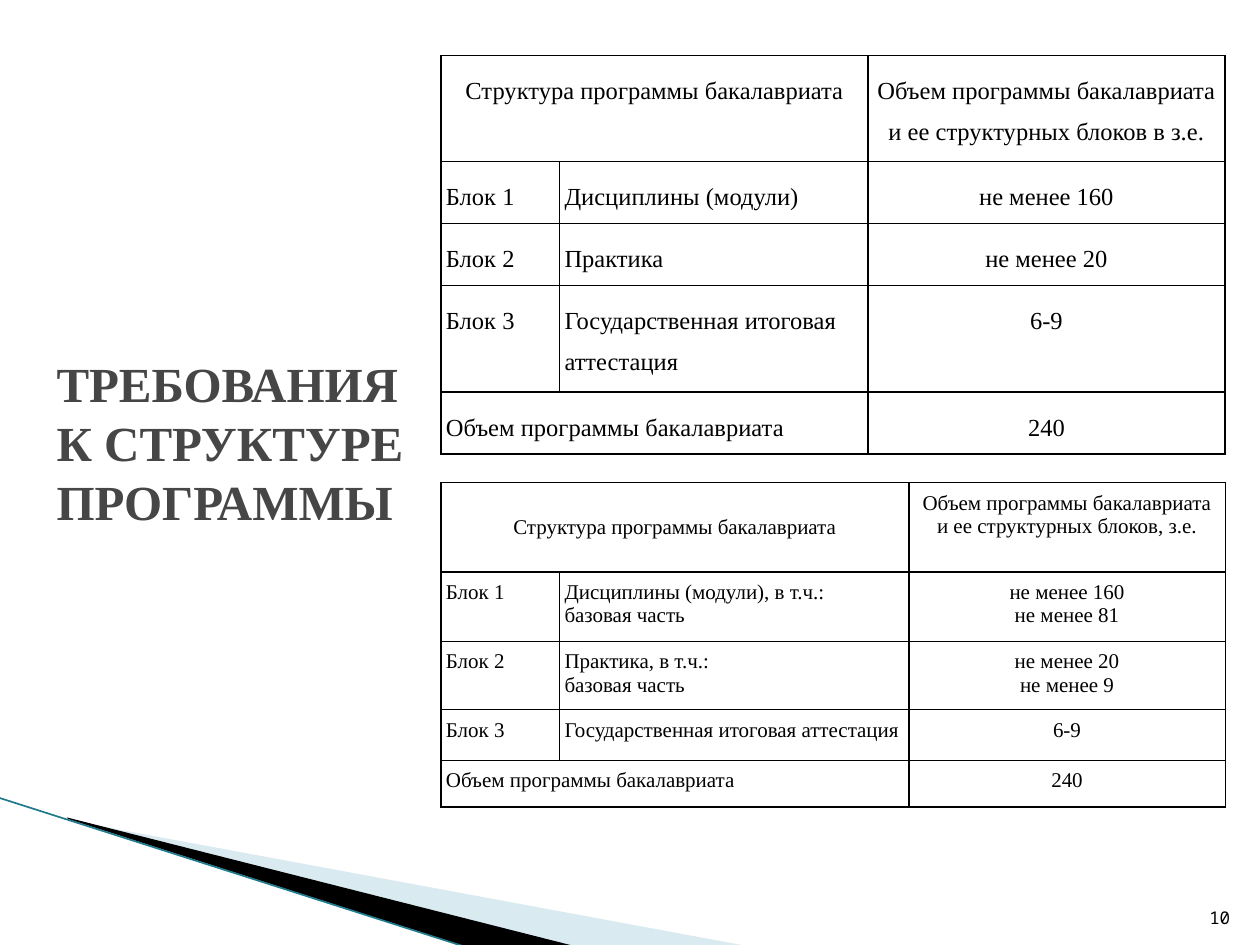
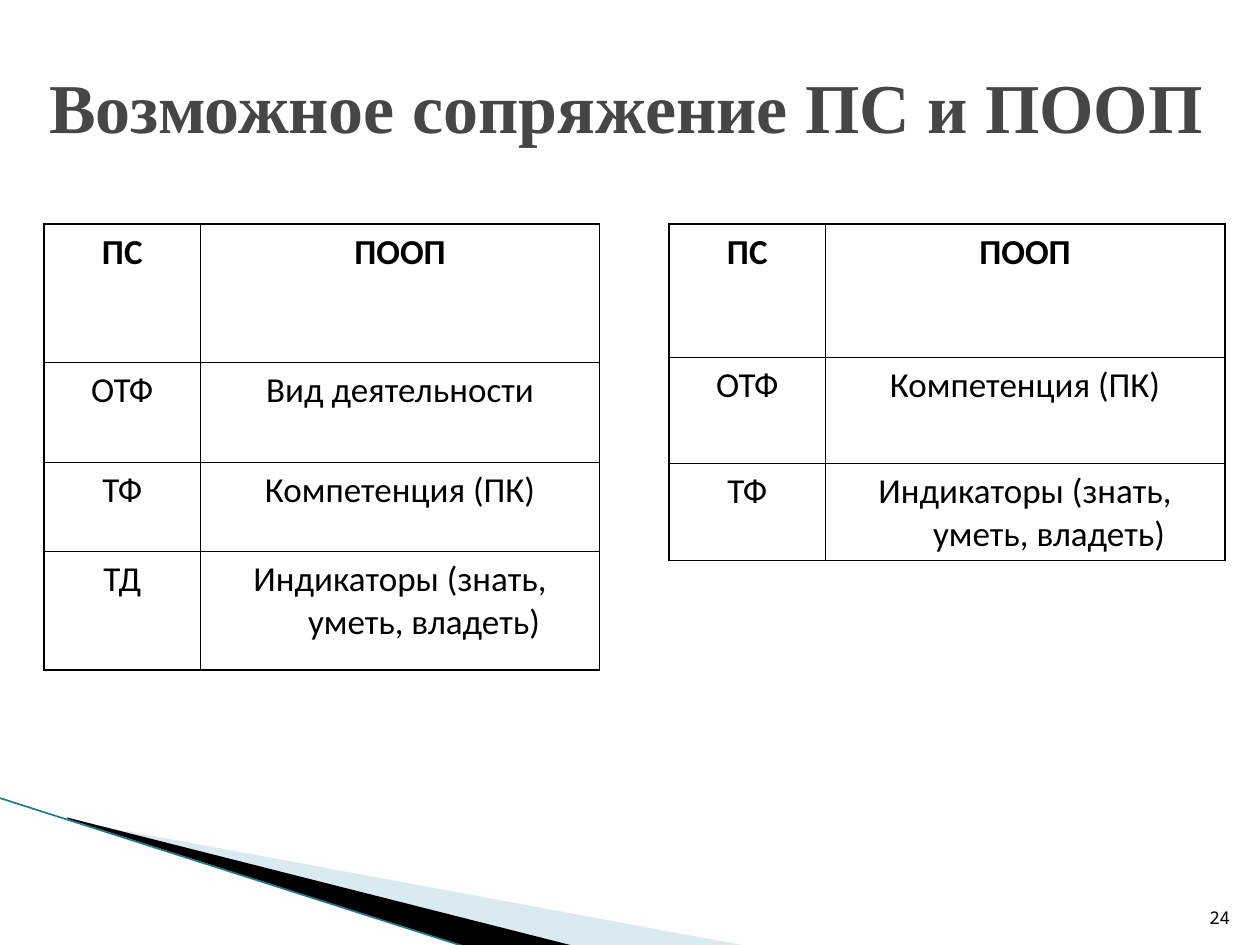
"""Build two slides on programme structure and the pairing of standards with programmes."""
import pptx
import pptx.dml.color
import pptx.enum.shapes
import pptx.enum.text
import pptx.oxml.ns
import pptx.util
from lxml import etree

Cm, Pt = pptx.util.Cm, pptx.util.Pt
ALIGN = pptx.enum.text.PP_ALIGN
ANCHOR = pptx.enum.text.MSO_ANCHOR
qn = pptx.oxml.ns.qn

COLORS = {"title": "464646", "text": "000000", "border": "000000",
          "light": "A0CBDC", "dark": "000000", "edge": "1F7A8C"}
FONTS = {"serif": "Times New Roman", "sans": "Calibri", "number": "Noto Sans Mono"}

LIGHT_BAND = [(1.4, 16.54), (15.11, 19.08), (11.58, 19.08), (1.4, 16.51)]
DARK_BAND = [(1.35, 16.48), (11.61, 19.08), (9.45, 19.1), (1.37, 16.51)]
EDGE = (-0.03, 16.08, 9.42, 19.1)
NUMBER_BOX = (24.03, 17.81, 1.02, 1.02)
HANGING = 0.97

STRUCTURE = {"font": "serif", "margins": (0.1, 0.18), "hanging": False, "bold_head": False,
             "center_all": False}
PAIRING = {"font": "sans", "margins": (0.25, 0.13), "hanging": True, "bold_head": True,
           "center_all": True, "size": 20, "spacing": None, "cols": [3.15, 8.05]}

SLIDES = [
    {"number": "10",
     "title": {"text": "ТРЕБОВАНИЯ К СТРУКТУРЕ ПРОГРАММЫ", "box": (0.89, 1.12, 7.62, 15.57),
               "size": 28, "align": ALIGN.LEFT},
     "tables": [
         {**STRUCTURE, "at": (8.89, 1.12), "size": 14, "spacing": 1.5,
          "cols": [2.39, 6.22, 7.19], "rows": [2.01, 1.17, 1.17, 1.88, 1.17],
          "cells": [
              ("Структура программы бакалавриата", None,
               "Объем программы бакалавриата\vи ее структурных блоков в з.е."),
              ("Блок 1", "Дисциплины (модули)", "не менее 160"),
              ("Блок 2", "Практика", "не менее 20"),
              ("Блок 3", "Государственная итоговая аттестация", "6-9"),
              ("Объем программы бакалавриата", None, "240")]},
         {**STRUCTURE, "at": (8.89, 9.73), "size": 12, "spacing": None, "middle_first": True,
          "cols": [2.39, 7.04, 6.38], "rows": [1.8, 1.4, 1.19, 1.02, 0.94],
          "cells": [
              ("Структура программы бакалавриата", None,
               "Объем программы бакалавриата\vи ее структурных блоков, з.е."),
              ("Блок 1", "Дисциплины (модули), в т.ч.:\nбазовая часть",
               "не менее 160\nне менее 81"),
              ("Блок 2", "Практика, в т.ч.:\nбазовая часть", "не менее 20\nне менее 9"),
              ("Блок 3", "Государственная итоговая аттестация", "6-9"),
              ("Объем программы бакалавриата", None, "240")]}]},
    {"number": "24",
     "title": {"text": "Возможное сопряжение ПС и ПООП", "box": (0.71, 0.53, 23.83, 3.18),
               "size": 40, "align": ALIGN.CENTER},
     "tables": [
         {**PAIRING, "at": (0.89, 4.52), "rows": [2.79, 2.01, 1.8, 2.39],
          "cells": [("ПС", "ПООП"), ("ОТФ", "Вид деятельности"), ("ТФ", "Компетенция (ПК)"),
                    ("ТД", "Индикаторы (знать, уметь, владеть)")]},
         {**PAIRING, "at": (13.49, 4.52), "rows": [2.69, 2.13, 1.96],
          "cells": [("ПС", "ПООП"), ("ОТФ", "Компетенция (ПК)"),
                    ("ТФ", "Индикаторы (знать, уметь, владеть)")]}]},
]


def rgb(name):
    return pptx.dml.color.RGBColor.from_string(COLORS[name])


def style_text(tf, font, size, color, align, bold=False):
    for p in tf.paragraphs:
        p.alignment = align
        for r in p.runs:
            r.font.name, r.font.size, r.font.bold = FONTS[font], Pt(size), bold
            r.font.color.rgb = rgb(color)


def add_text(slide, text, box, anchor, *style):
    tf = slide.shapes.add_textbox(*map(Cm, box)).text_frame
    tf.word_wrap = True
    tf.vertical_anchor = anchor
    tf.text = text
    style_text(tf, *style)


def add_band(slide, points, color, alpha=None):
    pts = [(Cm(x), Cm(y)) for x, y in points]
    builder = slide.shapes.build_freeform(*pts[0])
    builder.add_line_segments(pts[1:], close=True)
    sp = builder.convert_to_shape()
    sp.shadow.inherit = False
    sp.fill.solid()
    sp.fill.fore_color.rgb = rgb(color)
    sp.line.fill.background()
    if alpha:
        clr = sp._element.spPr.find(".//" + qn("a:srgbClr"))
        etree.SubElement(clr, qn("a:alpha"), val=str(alpha * 1000))


def add_decor(slide, number):
    add_band(slide, LIGHT_BAND, "light", alpha=40)
    add_band(slide, DARK_BAND, "dark")
    edge = slide.shapes.add_connector(pptx.enum.shapes.MSO_CONNECTOR.STRAIGHT, *map(Cm, EDGE))
    edge.line.color.rgb = rgb("edge")
    edge.line.width = Pt(0.95)
    etree.SubElement(edge._element.spPr, qn("a:effectLst"))
    add_text(slide, number, NUMBER_BOX, ANCHOR.BOTTOM, "number", 10, "text", ALIGN.RIGHT)


def set_borders(cell):
    tcPr = cell._tc.get_or_add_tcPr()
    for i, side in enumerate("LRTB"):
        ln = etree.Element(qn(f"a:ln{side}"), w=str(Pt(1)))
        fill = etree.SubElement(ln, qn("a:solidFill"))
        etree.SubElement(fill, qn("a:srgbClr"), val=COLORS["border"])
        tcPr.insert(i, ln)


def fill_cell(cell, text, spec, row, col):
    cell.fill.background()
    set_borders(cell)
    side, top = map(Cm, spec["margins"])
    cell.margin_left = cell.margin_right = side
    cell.margin_top = cell.margin_bottom = top
    if text is None:
        return
    if row == col == 0 and spec.get("middle_first"):
        cell.vertical_anchor = ANCHOR.MIDDLE
    tf = cell.text_frame
    tf.text = text
    centered = spec["center_all"] or row == 0 or col == len(spec["cols"]) - 1
    style_text(tf, spec["font"], spec["size"], "text",
               ALIGN.CENTER if centered else ALIGN.LEFT, spec["bold_head"] and row == 0)
    for p in tf.paragraphs:
        if spec["spacing"]:
            p.line_spacing = spec["spacing"]
        if spec["hanging"]:
            pPr = p._p.get_or_add_pPr()
            pPr.set("marL", str(Cm(HANGING)))
            pPr.set("indent", str(-Cm(HANGING)))


def add_grid(slide, spec):
    cols, rows = spec["cols"], spec["rows"]
    size = sum(cols), sum(rows)
    table = slide.shapes.add_table(len(rows), len(cols), *map(Cm, spec["at"] + size)).table
    table.first_row = table.horz_banding = False
    for column, width in zip(table.columns, cols):
        column.width = Cm(width)
    for i, (height, texts) in enumerate(zip(rows, spec["cells"])):
        table.rows[i].height = Cm(height)
        for j, text in enumerate(texts):
            fill_cell(table.cell(i, j), text, spec, i, j)
            if text is None:
                table.cell(i, j - 1).merge(table.cell(i, j))


def main():
    prs = pptx.Presentation()
    prs.slide_width, prs.slide_height = Cm(25.4), Cm(19.05)
    for content in SLIDES:
        slide = prs.slides.add_slide(prs.slide_layouts[6])
        add_decor(slide, content["number"])
        title = content["title"]
        add_text(slide, title["text"], title["box"], ANCHOR.MIDDLE,
                 "serif", title["size"], "title", title["align"], True)
        for spec in content["tables"]:
            add_grid(slide, spec)
    prs.save("out.pptx")


if __name__ == "__main__":
    main()
